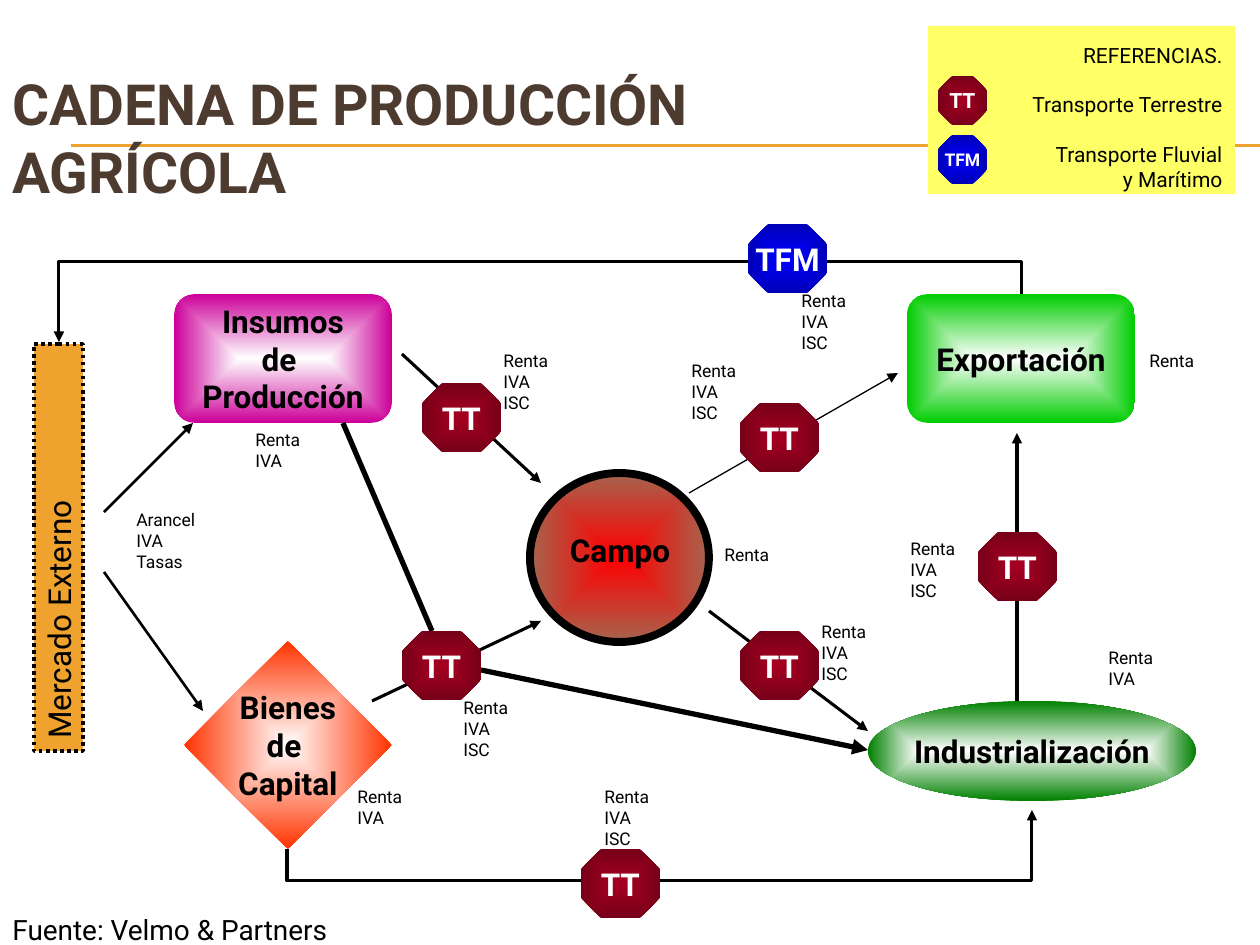
from pptx import Presentation, util as u
from pptx.dml.color import RGBColor
from pptx.enum import dml, shapes, text
from pptx.oxml import parse_xml
from pptx.oxml.ns import nsdecls, qn

PX_PER_INCH = 126
FONT = "Roboto"
BLACK, WHITE, ORANGE = "000000", "FFFFFF", "F0A22E"
RED_BADGE, BLUE_BADGE = ("A50021", "760018"), ("0000FF", "0000B6")
KIND, ALIGN, ANCHOR = shapes.MSO_SHAPE, text.PP_ALIGN, text.MSO_ANCHOR
TAXES = ["Renta", "IVA", "ISC"]


def px(length):
    return u.Emu(round(length * u.Inches(1) / PX_PER_INCH))


def color(value):
    return RGBColor.from_string(value)


def write(shape, lines, size, ink=BLACK, bold=False, align=ALIGN.LEFT,
          anchor=ANCHOR.TOP, wrap=False):
    frame = shape.text_frame
    frame.word_wrap = wrap
    frame.vertical_anchor = anchor
    for index, line in enumerate(lines):
        paragraph = frame.paragraphs[0] if index == 0 else frame.add_paragraph()
        paragraph.alignment = align
        run = paragraph.add_run()
        run.text = line
        run.font.name, run.font.size, run.font.bold = FONT, u.Pt(size), bold
        run.font.color.rgb = color(ink)
    return frame


def add_text(slide, box, lines, size, **style):
    return write(slide.shapes.add_textbox(*map(px, box)), lines, size, **style)


def add_label(slide, left, top, lines, width=77):
    add_text(slide, (left, top, width, 12 + 21 * len(lines)), lines, 10)


def fill_from_center(shape, inner, outer):
    shape.fill.gradient()
    for stop, value in zip(shape.fill.gradient_stops, (inner, outer)):
        stop.color.rgb = color(value)
    for position, stop in enumerate(shape.fill.gradient_stops):
        stop.position = position
    gradient = shape._element.spPr.find(qn("a:gradFill"))
    gradient.remove(gradient.find(qn("a:lin")))
    gradient.append(parse_xml(
        f'<a:path {nsdecls("a")} path="shape">'
        '<a:fillToRect l="50000" t="50000" r="50000" b="50000"/></a:path>'))


def add_node(slide, kind, box, fill):
    """Fill is one hex color, or an (inner, outer) pair for a gradient."""
    shape = slide.shapes.add_shape(kind, *map(px, box))
    shape.shadow.inherit = False
    shape.line.fill.background()
    if isinstance(fill, tuple):
        fill_from_center(shape, *fill)
    else:
        shape.fill.solid()
        shape.fill.fore_color.rgb = color(fill)
    return shape


def outline(shape, weight):
    shape.line.color.rgb = color(BLACK)
    shape.line.width = u.Pt(weight)


def add_badge(slide, left, top, name="TT", fill=RED_BADGE, size=18, width=79, height=69):
    badge = add_node(slide, KIND.OCTAGON, (left, top, width, height), fill)
    badge.adjustments[0] = 0.29
    write(badge, [name], size, WHITE, True, ALIGN.CENTER, ANCHOR.MIDDLE)


def add_line(slide, start, end, weight, ink=BLACK, arrow=True,
             kind=shapes.MSO_CONNECTOR.STRAIGHT):
    connector = slide.shapes.add_connector(kind, *map(px, (*start, *end)))
    connector.line.color.rgb = color(ink)
    connector.line.width = u.Pt(weight)
    if arrow:
        connector.line._get_or_add_ln().append(
            parse_xml(f'<a:tailEnd {nsdecls("a")} type="triangle"/>'))
    connector._element.spPr.append(parse_xml(f'<a:effectLst {nsdecls("a")}/>'))
    return connector


def add_elbow(slide, start, end, bend_y, rotation):
    """Arrow that runs vertically to bend_y, across, and vertically to its end."""
    (x0, y0), (x1, y1) = start, end
    connector = add_line(slide, start, end, 1.75, kind=shapes.MSO_CONNECTOR.ELBOW)
    width, height = abs(y1 - y0), abs(x1 - x0)
    connector.left, connector.top = px((x0 + x1 - width) / 2), px((y0 + y1 - height) / 2)
    connector.width, connector.height = px(width), px(height)
    properties = connector._element.spPr
    transform = properties.find(qn("a:xfrm"))
    for name, value in (("rot", rotation * 60000), ("flipH", 1), ("flipV", 1)):
        transform.set(name, str(value))
    bend = round(100000 * (bend_y - y0) / (y1 - y0))
    geometry = properties.find(qn("a:prstGeom"))
    for guides in geometry.findall(qn("a:avLst")):
        geometry.remove(guides)
    geometry.append(parse_xml(
        f'<a:avLst {nsdecls("a")}><a:gd name="adj1" fmla="val {bend}"/></a:avLst>'))


def add_header(slide):
    for y in (145, 146):
        add_line(slide, (71, y), (1260, y), 0.75, ORANGE, arrow=False)
    add_text(slide, (0, 84, 925, 105), ["CADENA DE PRODUCCIÓN AGRÍCOLA"], 32.4,
             ink="4E3B30", bold=True, anchor=ANCHOR.MIDDLE, wrap=True)


def add_legend(slide):
    panel = add_node(slide, KIND.RECTANGLE, (928, 26, 307, 168), "FFFF66")
    frame = write(panel, ["REFERENCIAS.", "Transporte Terrestre", "Transporte Fluvial",
                          "y Marítimo"], 12, align=ALIGN.RIGHT)
    frame.margin_top = px(16)
    for paragraph in frame.paragraphs[1:3]:
        paragraph.space_before = u.Pt(14)
    add_badge(slide, 938, 76, size=12, width=49, height=49)
    add_badge(slide, 938, 135, "TFM", BLUE_BADGE, 10, 49, 49)


def add_stages(slide):
    stages = [
        (KIND.ROUNDED_RECTANGLE, (174, 294, 218, 129), "CC0099",
         ["Insumos", "de ", "Producción"]),
        (KIND.DIAMOND, (184, 641, 208, 208), "FF3300", ["Bienes", "de ", "Capital"]),
        (KIND.ROUNDED_RECTANGLE, (907, 294, 228, 129), "00CC00", ["Exportación"]),
        (KIND.OVAL, (868, 701, 328, 100), "008000", ["Industrialización"]),
    ]
    for kind, box, edge, lines in stages:
        write(add_node(slide, kind, box, (WHITE, edge)), lines, 18, bold=True,
              align=ALIGN.CENTER, anchor=ANCHOR.MIDDLE)

    field = add_node(slide, KIND.OVAL, (530, 473, 179, 169), ("FF0000", "A5644E"))
    outline(field, 4.5)
    add_text(slide, (553, 525, 134, 50), ["Campo"], 18, bold=True, align=ALIGN.CENTER)

    market = add_node(slide, KIND.RECTANGLE, (34, 344, 49, 407), ORANGE)
    outline(market, 2)
    market.line.dash_style = dml.MSO_LINE.ROUND_DOT
    market.rotation = 180
    frame = write(market, ["Mercado Externo"], 18, align=ALIGN.CENTER,
                  anchor=ANCHOR.MIDDLE)
    frame._txBody.bodyPr.set("vert", "eaVert")


def add_flows(slide):
    for start, end, weight in [
        ((104, 512), (193, 423), 1.5),
        ((104, 572), (203, 711), 1.5),
        ((372, 701), (541, 621), 1.75),
        ((402, 354), (541, 483), 1.75),
        ((689, 493), (898, 373), 0.75),
        ((709, 611), (868, 731), 1.75),
        ((1017, 701), (1017, 433), 1.75),
        ((481, 670), (868, 750), 3),
    ]:
        add_line(slide, start, end, weight)
    add_line(slide, (343, 423), (432, 631), 3, arrow=False)
    add_elbow(slide, (1022, 294), (59, 342), 262, 270)
    add_elbow(slide, (287, 849), (1032, 810), 881, 90)

    for left, top in [(422, 383), (402, 631), (740, 403), (740, 631), (978, 532),
                      (581, 849)]:
        add_badge(slide, left, top)
    add_badge(slide, 748, 224, "TFM", BLUE_BADGE)


def add_taxes(slide):
    positions = {  # number of taxes: where they apply
        1: [(712, 538), (1137, 344)],
        2: [(243, 423), (345, 780), (1096, 641)],
        3: [(451, 691), (789, 284), (491, 344), (679, 354), (898, 532), (809, 615),
            (592, 780)],
    }
    for count, places in positions.items():
        for left, top in places:
            add_label(slide, left, top, TAXES[:count])
    add_label(slide, 124, 503, ["Arancel", "IVA", "Tasas"], width=91)


def main():
    presentation = Presentation()
    presentation.slide_width, presentation.slide_height = px(1260), px(945)
    slide = presentation.slides.add_slide(presentation.slide_layouts[6])
    add_header(slide)
    add_stages(slide)
    add_flows(slide)
    add_taxes(slide)
    add_legend(slide)
    # Source note
    note = add_node(slide, KIND.RECTANGLE, (0, 906, 374, 39), WHITE)
    write(note, ["Fuente: Velmo & Partners"], 16, wrap=True)
    presentation.save("out.pptx")


if __name__ == "__main__":
    main()
